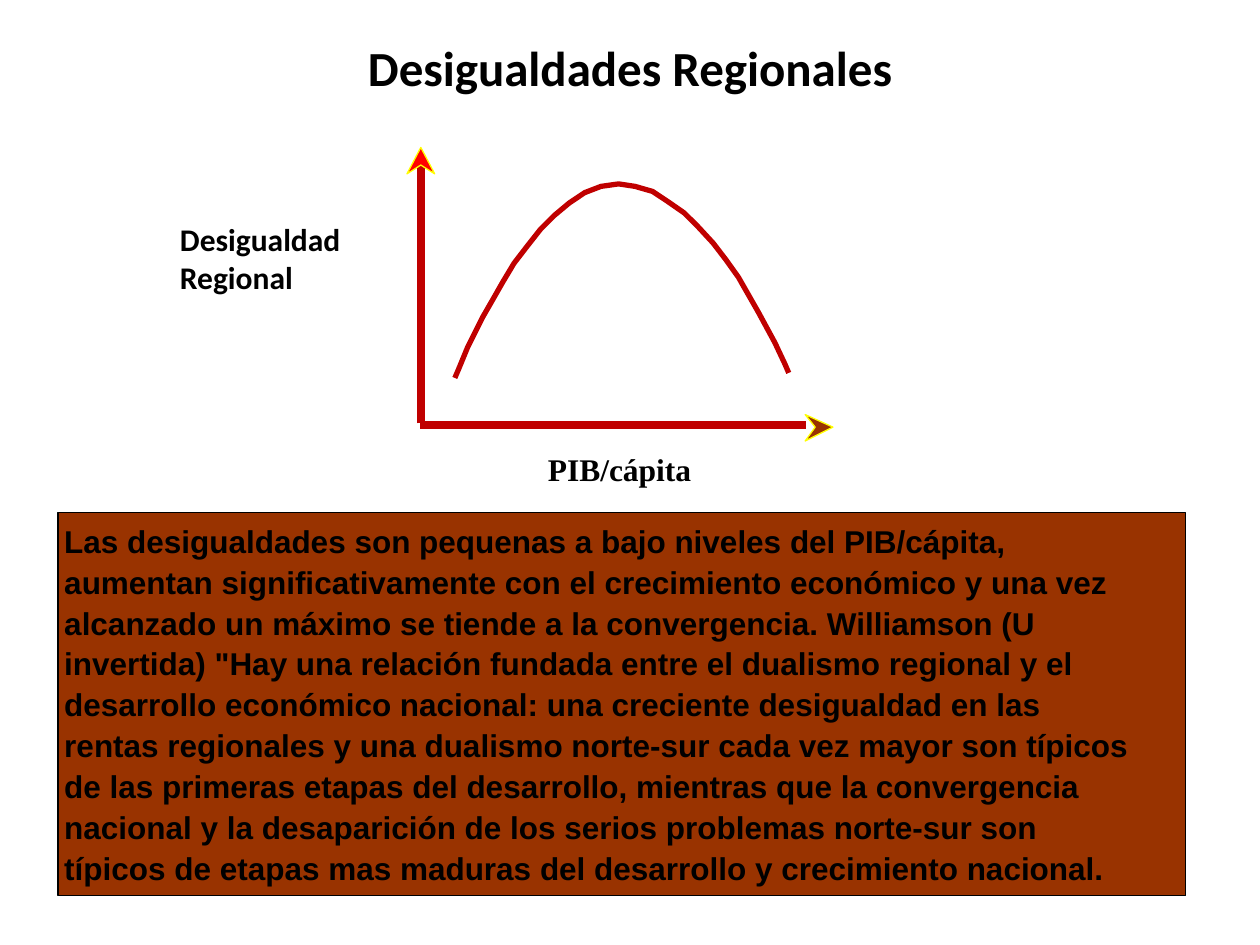
from lxml.etree import SubElement
from pptx import Presentation
from pptx.dml.color import RGBColor
from pptx.enum.shapes import MSO_CONNECTOR, MSO_SHAPE
from pptx.enum.text import MSO_ANCHOR, MSO_AUTO_SIZE, PP_ALIGN
from pptx.oxml.ns import qn
from pptx.util import Inches, Pt

BLACK = RGBColor(0x00, 0x00, 0x00)
CRIMSON = RGBColor(0xC0, 0x00, 0x00)
RED = RGBColor(0xFF, 0x00, 0x00)
YELLOW = RGBColor(0xFF, 0xFF, 0x00)
BROWN = RGBColor(0x99, 0x33, 0x00)

WIDTH, HEIGHT = 10, 7.5
TITLE = "Desigualdades Regionales"
VERTICAL_LABEL = ["Desigualdad", "Regional"]
HORIZONTAL_LABEL = "PIB/cápita"
PASSAGE = [
    ("Las desigualdades son pequenas a bajo niveles del PIB/cápita,", 7.54),
    ("aumentan significativamente con el crecimiento económico y una vez", 8.35),
    ("alcanzado un máximo se tiende a la convergencia. Williamson (U", 7.78),
    ('invertida) "Hay una relación fundada entre el dualismo regional y el', 8.07),
    ("desarrollo económico nacional: una creciente desigualdad en las", 7.82),
    ("rentas regionales y una dualismo norte-sur cada vez mayor son típicos", 8.51),
    ("de las primeras etapas del desarrollo, mientras que la convergencia", 8.72),
    ("nacional y la desaparición de los serios problemas norte-sur son", 7.79),
    ("típicos de etapas mas maduras del desarrollo y crecimiento nacional.", 8.32),
]
PASSAGE_LEFT, PASSAGE_TOP, PASSAGE_LAST = 0.51, 4.14, 6.74
LINE_PITCH = (PASSAGE_LAST - PASSAGE_TOP) / (len(PASSAGE) - 1)
LINE_HEIGHT = 0.3

AXES = [((3.34, 3.36), (3.34, 1.31)), ((3.33, 3.37), (6.4, 3.37))]
ARROWHEADS = [
    ([(3.23, 1.38), (3.34, 1.17), (3.45, 1.38), (3.34, 1.31)], RED),
    ([(6.39, 3.29), (6.61, 3.39), (6.39, 3.5), (6.47, 3.39)], BROWN),
]
INVERTED_U = [
    (3.61, 3), (3.64, 2.93), (3.71, 2.76), (3.83, 2.52), (3.91, 2.38),
    (3.99, 2.24), (4.08, 2.09), (4.18, 1.96), (4.29, 1.82), (4.4, 1.71),
    (4.52, 1.61), (4.64, 1.53), (4.77, 1.48), (4.91, 1.46), (5.04, 1.48),
    (5.18, 1.52), (5.3, 1.6), (5.43, 1.69), (5.54, 1.8), (5.66, 1.93),
    (5.76, 2.06), (5.86, 2.2), (5.94, 2.34), (6.02, 2.48), (6.15, 2.72),
    (6.23, 2.89), (6.26, 2.96),
]


def paint(shape, fill=None, line=None, weight=0):
    shape.shadow.inherit = False
    if fill is None:
        shape.fill.background()
    else:
        shape.fill.solid()
        shape.fill.fore_color.rgb = fill
    if line is None:
        shape.line.fill.background()
    else:
        shape.line.color.rgb = line
        shape.line.width = Pt(weight)


def add_rectangle(page, left, top, width, height, **style):
    box = page.shapes.add_shape(
        MSO_SHAPE.RECTANGLE, *map(Inches, (left, top, width, height)))
    paint(box, **style)
    return box


def add_outline(page, points, closed, **style):
    corners = [(Inches(x), Inches(y)) for x, y in points]
    builder = page.shapes.build_freeform(*corners[0])
    builder.add_line_segments(corners[1:], close=closed)
    paint(builder.convert_to_shape(), **style)


def add_axis(page, start, end):
    axis = page.shapes.add_connector(
        MSO_CONNECTOR.STRAIGHT, *map(Inches, start + end))
    axis.line.color.rgb = CRIMSON
    axis.line.width = Pt(4.5)
    SubElement(axis._element.spPr, qn("a:effectLst"))


def write(box, lines, font="Calibri", size=18, align=PP_ALIGN.LEFT,
          wrap=False, margins=(0.1, 0.05)):
    frame = box.text_frame
    frame.word_wrap = wrap
    frame.auto_size = MSO_AUTO_SIZE.SHAPE_TO_FIT_TEXT
    frame.vertical_anchor = MSO_ANCHOR.TOP
    frame.margin_left = frame.margin_right = Inches(margins[0])
    frame.margin_top = frame.margin_bottom = Inches(margins[1])
    for index, line in enumerate(lines):
        para = frame.add_paragraph() if index else frame.paragraphs[0]
        para.alignment = align
        span = para.add_run()
        span.text = line
        span.font.name = font
        span.font.size = Pt(size)
        span.font.bold = True
        span.font.color.rgb = BLACK


def add_label(page, lines, left, top, width, height, **style):
    box = page.shapes.add_textbox(*map(Inches, (left, top, width, height)))
    write(box, lines, **style)


def main():
    deck = Presentation()
    deck.slide_width, deck.slide_height = Inches(WIDTH), Inches(HEIGHT)
    page = deck.slides.add_slide(deck.slide_layouts[6])

    for (start, end), (points, fill) in zip(AXES, ARROWHEADS):
        add_axis(page, start, end)
        add_outline(page, points, True, fill=fill, line=YELLOW, weight=0.75)
    add_outline(page, INVERTED_U, False, line=CRIMSON, weight=3)

    add_rectangle(page, 0.46, 4.07, 8.95, 3.04, fill=BROWN, line=BLACK)
    for row, (line, width) in enumerate(PASSAGE):
        box = add_rectangle(page, PASSAGE_LEFT, PASSAGE_TOP + row * LINE_PITCH,
                            width, LINE_HEIGHT, fill=BROWN)
        write(box, [line], font="Arial", margins=(0, 0))

    add_label(page, VERTICAL_LABEL, 1.33, 1.7, 1.75, 0.7)
    add_label(page, [HORIZONTAL_LABEL], 4.25, 3.52, 1.34, 0.4,
              font="Times New Roman")
    add_label(page, [TITLE], 0, 0.25, WIDTH, 0.57, size=28,
              align=PP_ALIGN.CENTER, wrap=True)
    deck.save("out.pptx")


if __name__ == "__main__":
    main()
